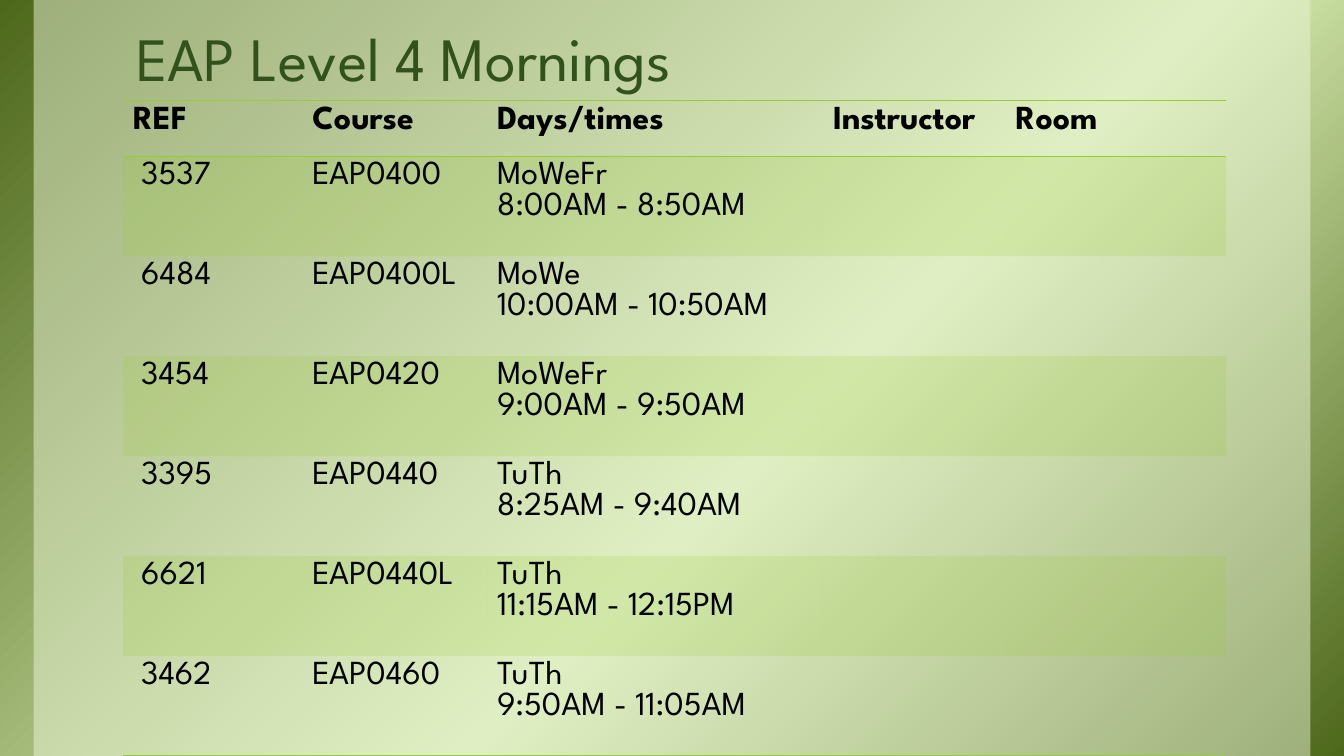
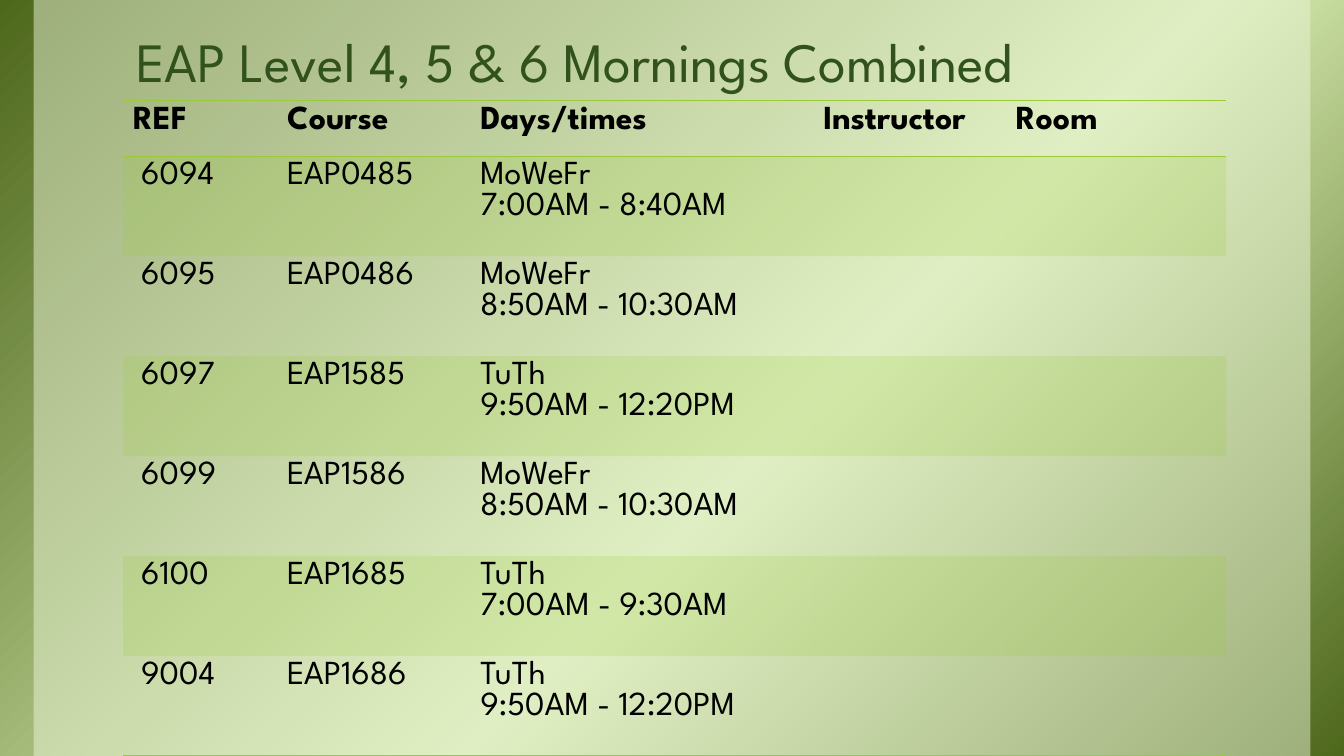
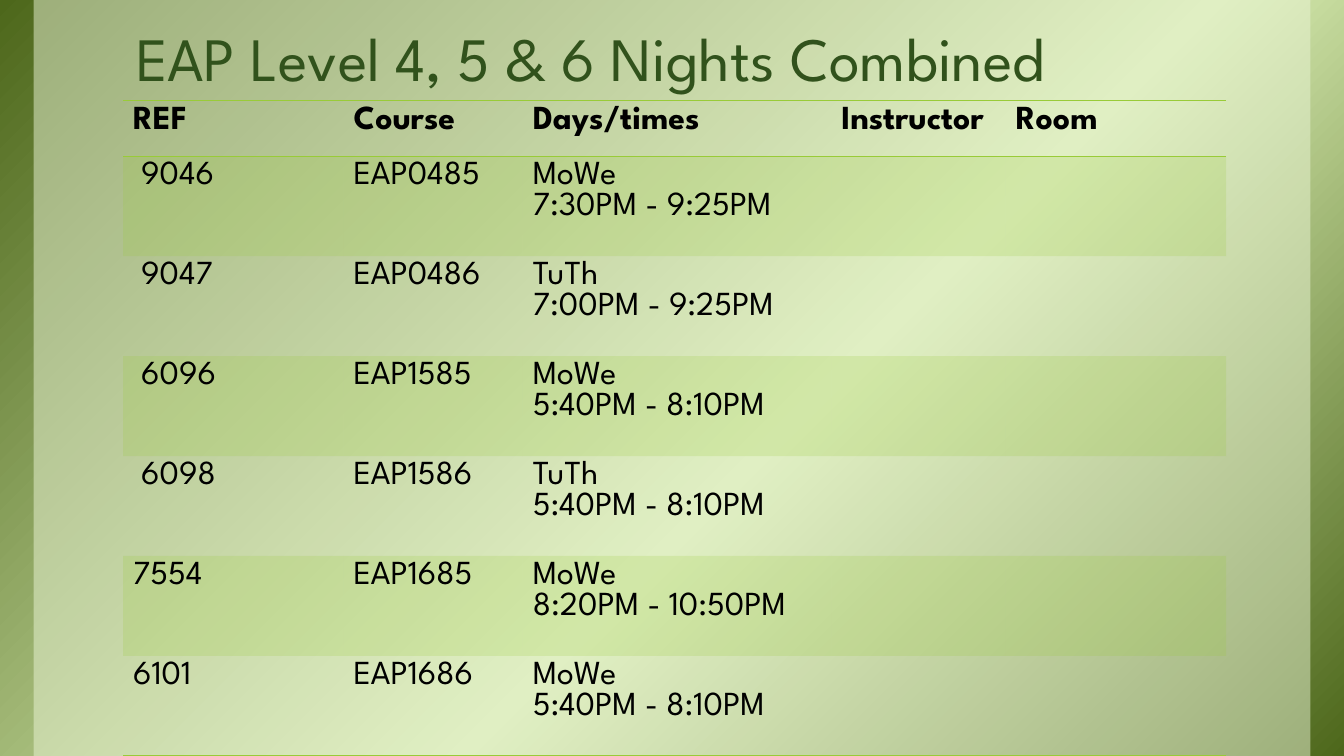
from lxml.etree import SubElement
from pptx import Presentation
from pptx.dml.color import RGBColor
from pptx.enum.shapes import MSO_SHAPE
from pptx.enum.text import MSO_ANCHOR
from pptx.oxml.ns import qn
from pptx.util import Pt

INK = {"title": "31521C", "text": "000000", "line": "99CB38",
       "dark": "4D671B", "light": "D6EAAF", "veil": "EBF5D7"}
FONT = "League Spartan"
WIDE, HIGH = 960, 540
LEFT, TOP = 87.9, 72
HEAD, ROW = 39.6, 71.4
PAD, SHIFT = 7.2, 5.8
PLAIN = "{2D5ABB26-0587-4C30-8999-92F81FD0307C}"
HEADS = ["REF", "Course", "Days/times", "Instructor", "Room"]

SLIDES = [
    ("EAP Level 4 Mornings", 44, [128, 132, 240, 130.5, 157.5], 6, [
        ("3537", "EAP0400", "MoWeFr", "8:00AM - 8:50AM"),
        ("6484", "EAP0400L", "MoWe", "10:00AM - 10:50AM"),
        ("3454", "EAP0420", "MoWeFr", "9:00AM - 9:50AM"),
        ("3395", "EAP0440", "TuTh", "8:25AM - 9:40AM"),
        ("6621", "EAP0440L", "TuTh", "11:15AM - 12:15PM"),
        ("3462", "EAP0460", "TuTh", "9:50AM - 11:05AM"),
    ]),
    ("EAP Level 4, 5 & 6 Mornings Combined", 39.6,
     [110, 138, 245, 137.5, 157.5], 6, [
        ("6094", "EAP0485", "MoWeFr", "7:00AM - 8:40AM"),
        ("6095", "EAP0486", "MoWeFr", "8:50AM - 10:30AM"),
        ("6097", "EAP1585", "TuTh", "9:50AM - 12:20PM"),
        ("6099", "EAP1586", "MoWeFr", "8:50AM - 10:30AM"),
        ("6100", "EAP1685", "TuTh", "7:00AM - 9:30AM"),
        ("9004", "EAP1686", "TuTh", "9:50AM - 12:20PM"),
    ]),
    ("EAP Level 4, 5 & 6 Nights Combined", 44,
     [157.5, 128, 220.5, 124.5, 157.5], 4, [
        ("9046", "EAP0485", "MoWe", "7:30PM - 9:25PM"),
        ("9047", "EAP0486", "TuTh", "7:00PM - 9:25PM"),
        ("6096", "EAP1585", "MoWe", "5:40PM - 8:10PM"),
        ("6098", "EAP1586", "TuTh", "5:40PM - 8:10PM"),
        ("7554", "EAP1685", "MoWe", "8:20PM - 10:50PM"),
        ("6101", "EAP1686", "MoWe", "5:40PM - 8:10PM"),
    ]),
]


def paint(fill, host, name, alpha):
    fill.solid()
    fill.fore_color.rgb = RGBColor.from_string(INK[name])
    tone = host.find(qn("a:solidFill"))[0]
    SubElement(tone, qn("a:alpha"), val=str(alpha * 1000))


def add_panel(slide, left, width):
    panel = slide.shapes.add_shape(
        MSO_SHAPE.RECTANGLE, Pt(left), 0, Pt(width), Pt(HIGH))
    panel.shadow.inherit = False
    panel.line.fill.background()
    return panel


def add_back(slide):
    base = add_panel(slide, 0, WIDE)
    base.fill.gradient()
    base.fill.gradient_angle = 315
    stops = base._element.spPr.find(qn("a:gradFill")).find(qn("a:gsLst"))
    for stop in list(stops):
        stops.remove(stop)
    for place, name in ((0, "dark"), (58, "light"), (100, "dark")):
        stop = SubElement(stops, qn("a:gs"), pos=str(place * 1000))
        SubElement(stop, qn("a:srgbClr"), val=INK[name])
    veil = add_panel(slide, 24, 912)
    paint(veil.fill, veil._element.spPr, "veil", 50)


def add_run(para, text, size, name, bold=False):
    run = para.add_run()
    run.text = text
    font = run.font
    font.name, font.size, font.bold = FONT, Pt(size), bold
    font.color.rgb = RGBColor.from_string(INK[name])


def add_title(slide, text, size):
    box = slide.shapes.add_textbox(Pt(LEFT), Pt(6), Pt(800), Pt(66))
    frame = box.text_frame
    frame.word_wrap = True
    frame.vertical_anchor = MSO_ANCHOR.BOTTOM
    frame.margin_left = frame.margin_right = Pt(9.4)
    frame.margin_top = frame.margin_bottom = Pt(5)
    para = frame.paragraphs[0]
    para.line_spacing = 0.85
    add_run(para, text, size, "title")


def add_edge(cell, side):
    edge = SubElement(cell._tc.get_or_add_tcPr(), qn("a:" + side),
                      w=str(Pt(1)))
    SubElement(SubElement(edge, qn("a:solidFill")), qn("a:srgbClr"),
               val=INK["line"])


def fill_cell(cell, lines, bold, edges, band):
    frame = cell.text_frame
    for i, line in enumerate(lines):
        para = frame.add_paragraph() if i else frame.paragraphs[0]
        add_run(para, line, 24, "text", bold)
    for side in edges:
        add_edge(cell, side)
    if band:
        paint(cell.fill, cell._tc.tcPr, "line", 20)
    else:
        cell.fill.background()


def add_grid(slide, widths, shifted, rows):
    count = len(rows) + 1
    frame = slide.shapes.add_table(
        count, len(HEADS), Pt(LEFT), Pt(TOP), Pt(sum(widths)),
        Pt(HEAD + ROW * len(rows)))
    grid = frame.table
    grid.first_row = grid.horz_banding = False
    grid._tbl.tblPr.find(qn("a:tableStyleId")).text = PLAIN
    for col, width in zip(grid.columns, widths):
        col.width = Pt(width)
    lines = [[[head] for head in HEADS]]
    lines += [[[ref], [course], [days, hours], [], []]
              for ref, course, days, hours in rows]
    for r, row in enumerate(lines):
        grid.rows[r].height = Pt(ROW if r else HEAD)
        edges = ["lnT", "lnB"] if r == 0 else ["lnB"] * (r == count - 1)
        for c, text in enumerate(row):
            fill_cell(grid.cell(r, c), text, r == 0, edges, r % 2 == 1)
        if 1 <= r <= shifted:
            grid.cell(r, 0).margin_left = Pt(PAD + SHIFT)


def main():
    deck = Presentation()
    deck.slide_width, deck.slide_height = Pt(WIDE), Pt(HIGH)
    for title, size, widths, shifted, rows in SLIDES:
        slide = deck.slides.add_slide(deck.slide_layouts[6])
        add_back(slide)
        add_title(slide, title, size)
        add_grid(slide, widths, shifted, rows)
    deck.save("out.pptx")


if __name__ == "__main__":
    main()
